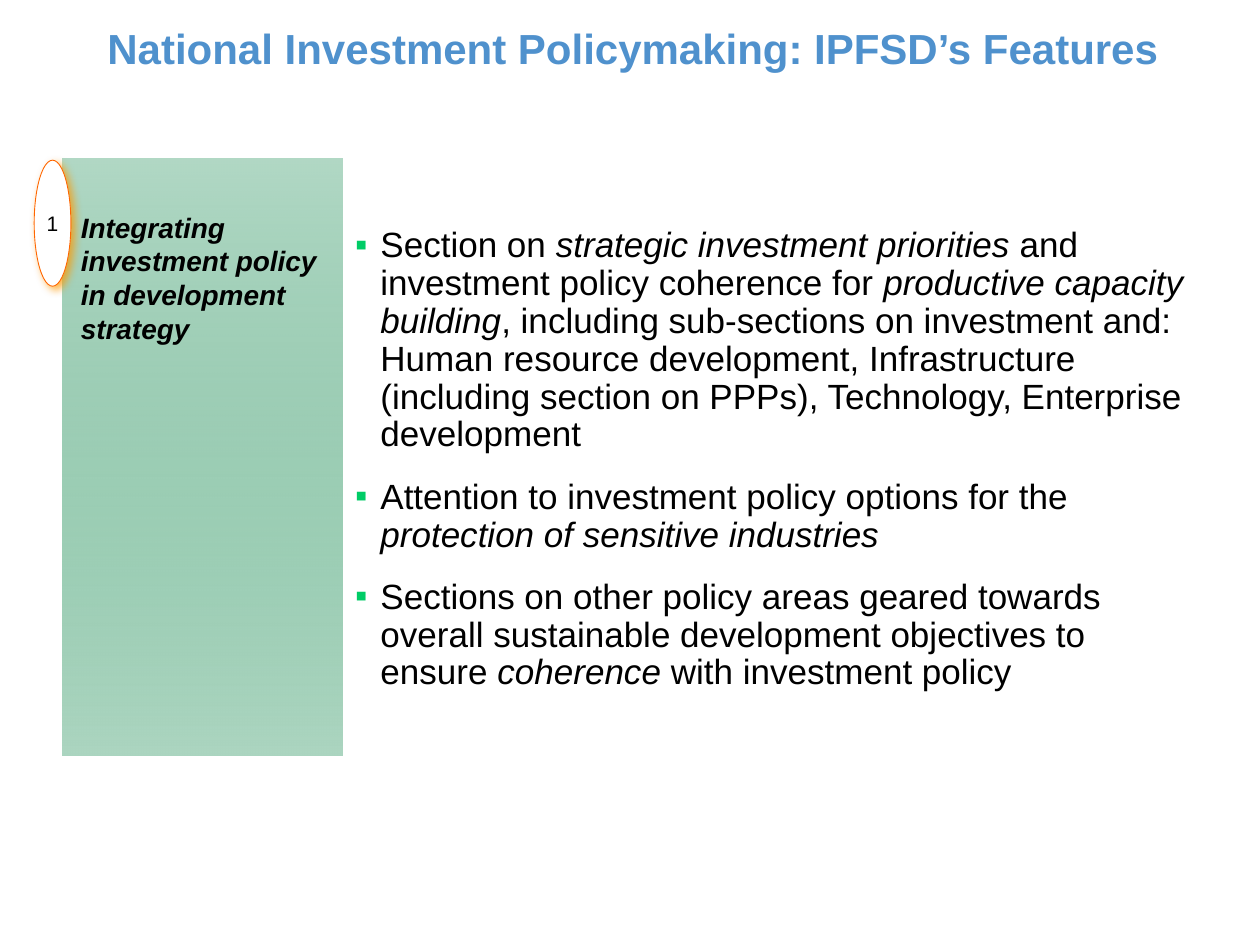
from lxml import etree
from pptx import Presentation
from pptx import util as u
from pptx.dml.color import RGBColor
from pptx.enum import shapes, text
from pptx.oxml import ns

THEME = {
    "title": {"size": u.Pt(24), "bold": True, "color": "4F91CD"},
    "heading": {"size": u.Pt(16), "bold": True, "italic": True, "color": "000000"},
    "body": {"size": u.Pt(20), "color": "000000"},
    "number": {"size": u.Pt(12), "color": "000000"},
    "font": "Arial",
    "panel": ("339966", "ABD5C0"),
    "bullet": "00CC66",
    "badge": "FFFFFF",
    "badge_line": "FF6600",
    "badge_shadow": "FF9900",
}


def add_run(paragraph, words, style, italic=None):
    run = paragraph.add_run()
    run.text = words
    run.font.name = THEME["font"]
    for key, value in THEME[style].items():
        if key == "color":
            run.font.color.rgb = RGBColor.from_string(value)
        else:
            setattr(run.font, key, value)
    if italic:
        run.font.italic = True


def add_xml(parent, tag, **attributes):
    """Append a DrawingML child element and return it."""
    return etree.SubElement(parent, ns.qn(tag), attributes)


prs = Presentation()
prs.slide_width, prs.slide_height = u.Cm(25.4), u.Cm(19.05)
slide = prs.slides.add_slide(prs.slide_layouts[6])

# Green side panel
panel = slide.shapes.add_shape(
    shapes.MSO_SHAPE.RECTANGLE, u.Cm(1.27), u.Cm(3.2), u.Cm(5.64), u.Cm(12.04))
panel.shadow.inherit = False
panel.line.fill.background()
panel.fill.gradient()
panel.fill.gradient_angle = 270
for stop, color in zip(panel.fill.gradient_stops, THEME["panel"]):
    stop.color.rgb = RGBColor.from_string(color)
first_color = next(panel._element.spPr.iter(ns.qn("a:srgbClr")))
add_xml(first_color, "a:alpha", val="38000")

# Bulleted features; each paragraph is a list of (words, italic)
features = [
    [("Section on ", False), ("strategic investment priorities", True),
     (" and investment policy coherence for ", False),
     ("productive capacity building", True),
     (", including sub-sections on investment and: Human resource development, "
      "Infrastructure (including section on PPPs), Technology, Enterprise "
      "development", False)],
    [("Attention to investment policy options for the ", False),
     ("protection of sensitive industries", True)],
    [("Sections on other policy areas geared towards overall sustainable "
      "development objectives to ensure ", False),
     ("coherence", True), (" with investment policy", False)],
]
body = slide.shapes.add_textbox(u.Cm(6.91), u.Cm(3.12), u.Cm(17.53), u.Cm(11.18)).text_frame
body.word_wrap = True
body.margin_top = u.Cm(1.47)
for index, feature in enumerate(features):
    paragraph = body.paragraphs[0] if index == 0 else body.add_paragraph()
    p_pr = paragraph._p.get_or_add_pPr()
    p_pr.set("marL", str(u.Cm(0.51)))
    p_pr.set("indent", str(-u.Cm(0.51)))
    add_xml(add_xml(p_pr, "a:buClr"), "a:srgbClr", val=THEME["bullet"])
    add_xml(p_pr, "a:buFont", typeface=THEME["font"])
    add_xml(p_pr, "a:buChar", char="▪")
    paragraph.line_spacing = 0.9
    paragraph.space_after = u.Pt(10)
    if index:
        paragraph.space_before = u.Pt(4)
    for words, italic in feature:
        add_run(paragraph, words, "body", italic)

# Panel heading
heading = slide.shapes.add_textbox(u.Cm(1.63), u.Cm(4.24), u.Cm(5.03), u.Cm(2.72)).text_frame
heading.word_wrap = True
for side in ("left", "top", "right", "bottom"):
    setattr(heading, f"margin_{side}", 0)
add_run(heading.paragraphs[0],
        "Integrating investment policy in development strategy", "heading")

# Numbered badge with an orange shadow
badge = slide.shapes.add_shape(
    shapes.MSO_SHAPE.OVAL, u.Cm(0.69), u.Cm(3.23), u.Cm(0.74), u.Cm(2.54))
badge.fill.solid()
badge.fill.fore_color.rgb = RGBColor.from_string(THEME["badge"])
badge.line.color.rgb = RGBColor.from_string(THEME["badge_line"])
badge.line.width = u.Pt(0.5)
badge.shadow.inherit = False
shadow = add_xml(badge._element.spPr.find(ns.qn("a:effectLst")), "a:outerShdw",
                 blurRad=str(u.Pt(5)), dist=str(u.Pt(3)), dir="2700000",
                 algn="tl", rotWithShape="0")
shadow_color = add_xml(shadow, "a:srgbClr", val=THEME["badge_shadow"])
add_xml(shadow_color, "a:alpha", val="75000")
number = badge.text_frame
number.vertical_anchor = text.MSO_ANCHOR.MIDDLE
for side in ("left", "top", "right", "bottom"):
    setattr(number, f"margin_{side}", u.Cm(0.1))
number.paragraphs[0].alignment = text.PP_ALIGN.CENTER
add_run(number.paragraphs[0], "1", "number")

# Slide title
title = slide.shapes.add_textbox(u.Cm(1.9), u.Cm(0.33), u.Cm(21.72), u.Cm(1.27)).text_frame
title.word_wrap = False
title.paragraphs[0].alignment = text.PP_ALIGN.CENTER
add_run(title.paragraphs[0],
        "National Investment Policymaking: IPFSD’s Features", "title")

prs.save("out.pptx")
